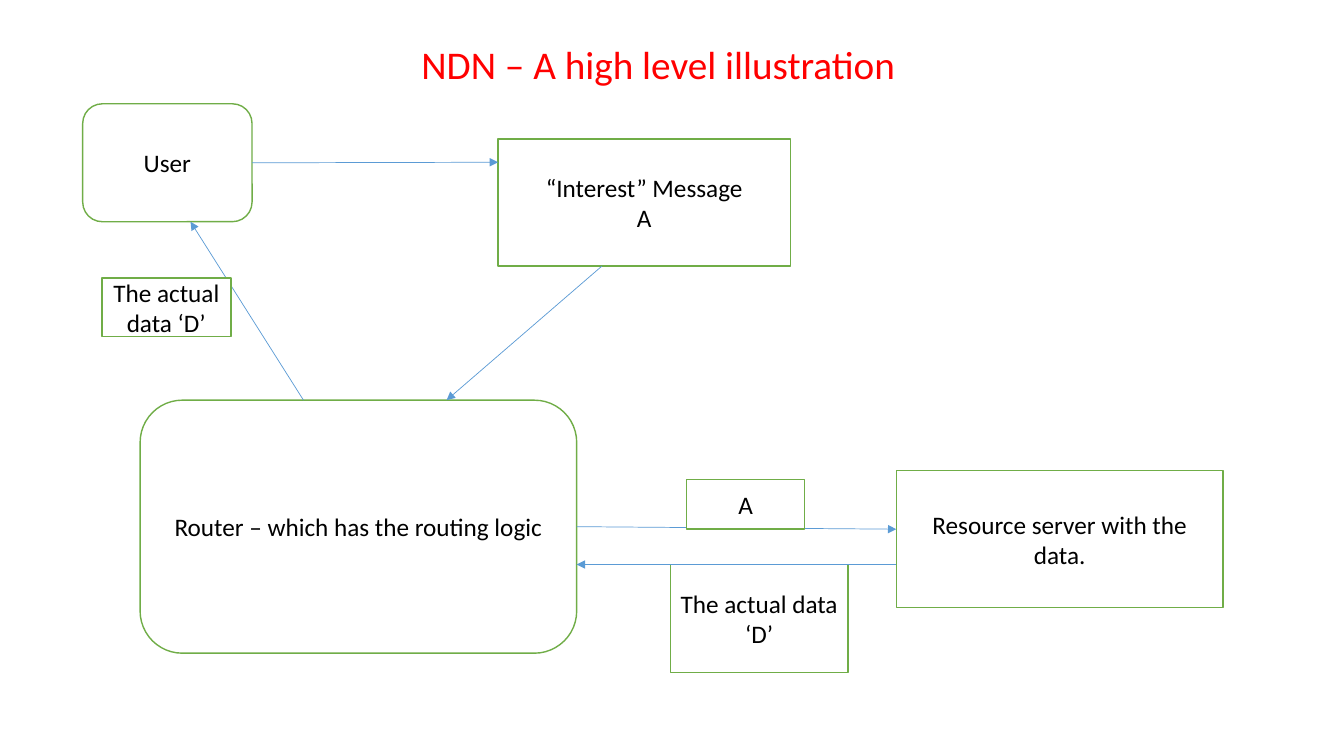
import pptx
import pptx.dml.color
import pptx.enum.shapes
import pptx.enum.text
import pptx.oxml.ns
import pptx.util
import lxml.etree

Inches = pptx.util.Inches
Shape = pptx.enum.shapes.MSO_SHAPE
Align = pptx.enum.text.PP_ALIGN
Anchor = pptx.enum.text.MSO_ANCHOR

GREEN, BLUE, RED = "70AD47", "5B9BD5", "FF0000"
BLACK, WHITE = "000000", "FFFFFF"
RIGHT_SIDE = 3

# Boxes as left, top, width, height within the diagram
NODES = {
    "user": (Shape.ROUNDED_RECTANGLE, "User", (0, 0, 1.68, 1.17)),
    "interest": (Shape.RECTANGLE, "“Interest” Message\nA", (4.12, 0.35, 2.9, 1.26)),
    "router": (Shape.ROUNDED_RECTANGLE, "Router – which has the routing logic",
               (0.57, 2.94, 4.33, 2.51)),
    "server": (Shape.RECTANGLE, "Resource server with the data.", (8.07, 3.64, 3.24, 1.36)),
    "server data": (Shape.RECTANGLE, "The actual data\n‘D’", (5.83, 4.57, 1.76, 1.07)),
}
# Labels that lie over the arrows
LABELS = {
    "request": (Shape.RECTANGLE, "A", (5.99, 3.73, 1.17, 0.49)),
    "user data": (Shape.RECTANGLE, "The actual data ‘D’", (0.19, 1.73, 1.28, 0.58)),
}
# Start, end, and the node whose right side the arrow leaves from the middle
ARROWS = [
    ((1.68, 0.58), (4.12, 0.58), "user"),
    ((4.9, 4.2), (8.07, 4.22), "router"),
    ((8.07, 4.57), (4.9, 4.57), None),
    ((5.15, 1.61), (3.61, 2.94), None),
    ((2.19, 2.94), (1.07, 1.17), None),
]


def color(value):
    return pptx.dml.color.RGBColor.from_string(value)


def format_text(text_frame, size, text_color, alignment, anchor):
    text_frame.word_wrap = True
    text_frame.vertical_anchor = anchor
    for paragraph in text_frame.paragraphs:
        paragraph.alignment = alignment
        paragraph.font.name = "Calibri"
        paragraph.font.size = pptx.util.Pt(size)
        paragraph.font.color.rgb = color(text_color)


def add_box(slide, kind, text, left, top, width, height):
    shape = slide.shapes.add_shape(
        kind, Inches(left), Inches(top), Inches(width), Inches(height))
    shape.shadow.inherit = False
    shape.fill.solid()
    shape.fill.fore_color.rgb = color(WHITE)
    shape.line.color.rgb = color(GREEN)
    shape.line.width = pptx.util.Pt(1)
    shape.text_frame.text = text
    format_text(shape.text_frame, 18, BLACK, Align.CENTER, Anchor.MIDDLE)
    return shape


def add_arrow(slide, start_x, start_y, end_x, end_y):
    connector = slide.shapes.add_connector(
        pptx.enum.shapes.MSO_CONNECTOR.STRAIGHT,
        Inches(start_x), Inches(start_y), Inches(end_x), Inches(end_y))
    connector.line.color.rgb = color(BLUE)
    connector.line.width = pptx.util.Pt(0.5)
    # Arrowhead, and no shadow
    qualified = pptx.oxml.ns.qn
    line = connector.line._get_or_add_ln()
    lxml.etree.SubElement(line, qualified("a:tailEnd"), type="triangle")
    lxml.etree.SubElement(connector._element.spPr, qualified("a:effectLst"))
    return connector


def add_title(slide, left, top, width, height):
    title = slide.shapes.title
    title.left, title.top = Inches(left), Inches(top)
    title.width, title.height = Inches(width), Inches(height)
    title.text_frame.text = "NDN – A high level illustration"
    title.text_frame.auto_size = pptx.enum.text.MSO_AUTO_SIZE.NONE
    format_text(title.text_frame, 28, RED, Align.LEFT, Anchor.TOP)


def add_diagram(slide, left, top):
    def place(boxes):
        return {name: add_box(slide, kind, text, left + x, top + y, width, height)
                for name, (kind, text, (x, y, width, height)) in boxes.items()}

    # Nodes, then the arrows between them, then the labels on top
    nodes = place(NODES)
    for (start_x, start_y), (end_x, end_y), source in ARROWS:
        arrow = add_arrow(slide, left + start_x, top + start_y, left + end_x, top + end_y)
        if source:
            arrow.begin_connect(nodes[source], RIGHT_SIDE)
    place(LABELS)


def main():
    presentation = pptx.Presentation()
    presentation.slide_width = Inches(13.33)
    presentation.slide_height = Inches(7.5)
    title_only = presentation.slide_layouts[5]
    slide = presentation.slides.add_slide(title_only)
    add_title(slide, 4.08, 0.35, 8.86, 0.57)
    add_diagram(slide, 0.82, 1.03)
    presentation.save("out.pptx")


if __name__ == "__main__":
    main()
